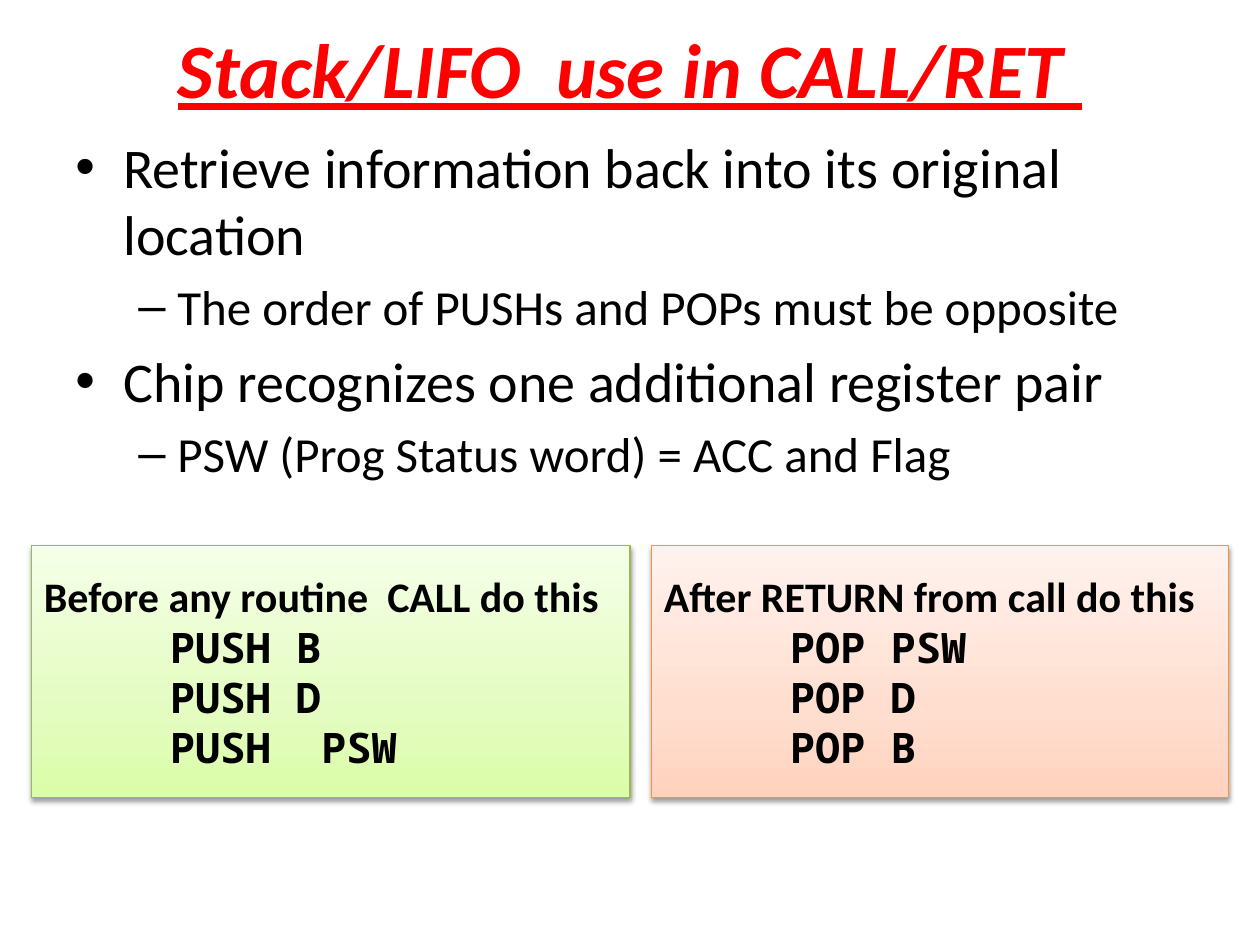
from copy import deepcopy

from pptx import Presentation
from pptx.dml.color import RGBColor
from pptx.enum.shapes import MSO_SHAPE
from pptx.enum.text import MSO_ANCHOR, PP_ALIGN
from pptx.oxml import parse_xml
from pptx.oxml.ns import nsdecls, qn
from pptx.util import Inches, Pt

TEXT_FONT = "Calibri"
CODE_FONT = "Noto Sans Mono"
BULLET_LEVELS = [("•", 0.38, 0.38, 32), ("–", 0.81, 0.31, 28)]


def colour(value):
    return RGBColor.from_string(value)


def add_span(para, text, size, font=TEXT_FONT, fill="000000", bold=False):
    span = para.add_run()
    span.text = text
    span.font.size = Pt(size)
    span.font.name = font
    span.font.bold = bold
    span.font.color.rgb = colour(fill)
    return span


def paragraphs(frame, count):
    return [frame.paragraphs[0]] + [frame.add_paragraph() for _ in range(count - 1)]


def set_title(page, text):
    title = page.shapes.title
    title.left, title.top = Inches(0.5), Inches(0)
    title.width, title.height = Inches(9), Inches(1.08)
    frame = title.text_frame
    frame.word_wrap = True
    frame.vertical_anchor = MSO_ANCHOR.MIDDLE
    para = frame.paragraphs[0]
    para.alignment = PP_ALIGN.CENTER
    span = add_span(para, text, 44, fill="FF0000", bold=True)
    span.font.italic = True
    span.font.underline = True


def set_bullet(para, level, symbol, margin, hanging):
    para.level = level
    properties = para._p.get_or_add_pPr()
    properties.set("marL", str(Inches(margin)))
    properties.set("indent", str(-Inches(hanging)))
    for markup in (
        f'<a:spcBef {nsdecls("a")}><a:spcPct val="20000"/></a:spcBef>',
        f'<a:buFont {nsdecls("a")} typeface="Arial"/>',
        f'<a:buChar {nsdecls("a")} char="{symbol}"/>',
    ):
        properties.append(parse_xml(markup))


def add_bullets(page, items):
    box = page.shapes.add_textbox(Inches(0.5), Inches(1), Inches(9), Inches(5.7))
    frame = box.text_frame
    frame.word_wrap = True
    for para, (level, text) in zip(paragraphs(frame, len(items)), items):
        symbol, margin, hanging, size = BULLET_LEVELS[level]
        set_bullet(para, level, symbol, margin, hanging)
        add_span(para, text, size)


def set_gradient(box, colours):
    box.fill.gradient()
    box.fill.gradient_angle = 90
    stop_list = box._element.spPr.find(qn("a:gradFill")).find(qn("a:gsLst"))
    stop_list.append(deepcopy(stop_list[0]))
    for stop, position, value in zip(box.fill.gradient_stops, (0, 0.35, 1), colours):
        stop.position = position
        stop.color.rgb = colour(value)


def set_shadow(box):
    box.shadow.inherit = False
    effects = box._element.spPr.find(qn("a:effectLst"))
    effects.append(parse_xml(
        f'<a:outerShdw {nsdecls("a")} blurRad="{Pt(3.1)}" dist="{Pt(1.6)}" '
        'dir="5400000" rotWithShape="0"><a:srgbClr val="000000">'
        '<a:alpha val="38000"/></a:srgbClr></a:outerShdw>'
    ))


def set_tab(para, position):
    para._p.get_or_add_pPr().append(parse_xml(
        f'<a:tabLst {nsdecls("a")}><a:tab pos="{Inches(position)}" algn="l"/></a:tabLst>'
    ))


def add_code_box(page, left, width, gradient, outline, heading, instructions):
    box = page.shapes.add_shape(
        MSO_SHAPE.RECTANGLE, Inches(left), Inches(4.33), Inches(width), Inches(2)
    )
    set_gradient(box, gradient)
    box.line.color.rgb = colour(outline)
    box.line.width = Pt(0.75)
    set_shadow(box)
    frame = box.text_frame
    frame.word_wrap = True
    frame.vertical_anchor = MSO_ANCHOR.MIDDLE
    first, *rest = paragraphs(frame, len(instructions) + 1)
    first.alignment = PP_ALIGN.LEFT
    add_span(first, heading, 24, bold=True)
    for para, instruction in zip(rest, instructions):
        para.alignment = PP_ALIGN.LEFT
        set_tab(para, 1)
        add_span(para, "\t" + instruction, 24, CODE_FONT, bold=True)


def main():
    deck = Presentation()
    deck.slide_width, deck.slide_height = Inches(10), Inches(7.5)
    page = deck.slides.add_slide(deck.slide_layouts[5])
    set_title(page, "Stack/LIFO  use in CALL/RET ")
    add_bullets(page, [
        (0, "Retrieve information back into its original location"),
        (1, "The order of PUSHs and POPs must be opposite"),
        (0, "Chip recognizes one additional register pair"),
        (1, "PSW (Prog Status word) = ACC and Flag"),
    ])
    add_code_box(
        page, 0.25, 4.75, ("DAFDA7", "E4FCC2", "F5FFE7"), "98B955",
        "Before any routine  CALL do this", ("PUSH B", "PUSH D", "PUSH  PSW"),
    )
    add_code_box(
        page, 5.17, 4.58, ("FFD2BD", "FFDED0", "FFF2ED"), "F69240",
        "After RETURN from call do this", ("POP PSW", "POP D", "POP B"),
    )
    deck.save("out.pptx")


if __name__ == "__main__":
    main()
